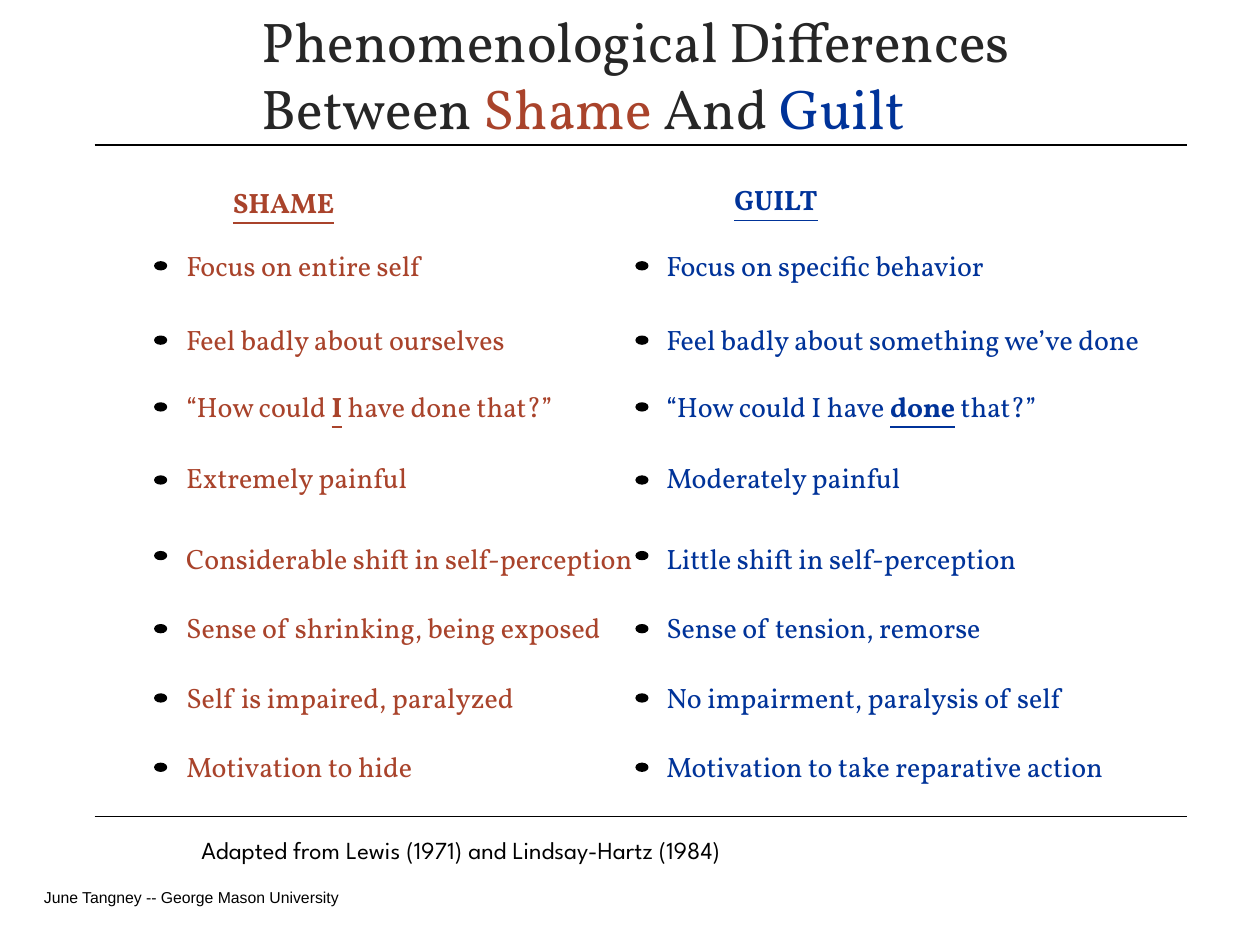
import pptx
import pptx.dml.color
import pptx.enum.shapes
import pptx.enum.text
import pptx.oxml
import pptx.util
from pptx.util import Inches

THEME = {
    "ink": "262626", "shame": "A9432B", "guilt": "003399", "black": "000000",
    "serif": "Vollkorn", "sans": "League Spartan", "plain": "Arial",
    "title_size": 32, "body_size": 16, "source_size": 14, "footer_size": 9,
}

# Content: a title line is a list of (text, colour) runs
TITLE = [
    [("Phenomenological Differences", "ink")],
    [("Between ", "ink"), ("Shame ", "shame"), ("And ", "ink"), ("Guilt", "guilt")],
]
SOURCE = "Adapted from Lewis (1971) and Lindsay-Hartz (1984)"
FOOTER = "June Tangney -- George Mason University"

# Each item is (text, box width); *stars* mark the stressed word
COLUMNS = [
    {
        "color": "shame", "bullet_left": 1.23, "text_left": 1.38,
        "heading": ("*SHAME*", 1.75, 1.42, 1.06),
        "items": [
            ("Focus on entire self", 2.11),
            ("Feel badly about ourselves", 2.84),
            ("“How could *I* have done that?”", 3.31),
            ("Extremely painful", 2.04),
            ("Considerable shift in self-perception", 3.8),
            ("Sense of shrinking, being exposed", 3.56),
            ("Self is impaired, paralyzed", 2.85),
            ("Motivation to hide", 2.05),
        ],
    },
    {
        "color": "guilt", "bullet_left": 5.05, "text_left": 5.19,
        "heading": ("*GUILT*", 5.73, 1.4, 0.94),
        "items": [
            ("Focus on specific behavior", 2.82),
            ("Feel badly about something we’ve done", 4.22),
            ("“How could I have *done* that?”", 3.31),
            ("Moderately painful", 2.12),
            ("Little shift in self-perception", 3.01),
            ("Sense of tension, remorse", 2.71),
            ("No impairment, paralysis of self", 3.37),
            ("Motivation to take reparative action", 3.76),
        ],
    },
]

# Row positions: (text top, bullet top)
ROWS = [(1.92, 2.08), (2.51, 2.67), (3.04, 3.2), (3.61, 3.78),
        (4.25, 4.38), (4.8, 4.96), (5.35, 5.51), (5.9, 6.06)]
ROW_HEIGHT = 0.37
RULE_TOPS = (1.15, 6.48)
RULE_LEFT, RULE_RIGHT = 0.75, 9.42


def color_of(name):
    return pptx.dml.color.RGBColor.from_string(THEME[name])


def add_text(page, area, lines, font, size, wrap=False):
    """Lines hold runs of (text, colour) or (text, colour, stressed)."""
    box = page.shapes.add_textbox(*map(Inches, area))
    frame = box.text_frame
    frame.word_wrap = wrap
    frame.auto_size = pptx.enum.text.MSO_AUTO_SIZE.SHAPE_TO_FIT_TEXT
    for index, runs in enumerate(lines):
        para = frame.add_paragraph() if index else frame.paragraphs[0]
        for text, color, *stressed in runs:
            span = para.add_run()
            span.text = text
            span.font.name = THEME[font]
            span.font.size = pptx.util.Pt(THEME[size])
            span.font.color.rgb = color_of(color)
            if any(stressed):
                span.font.bold = span.font.underline = True


def add_marked(page, area, text, color):
    """Every second part between stars is bold and underlined."""
    runs = [(part, color, index % 2 == 1)
            for index, part in enumerate(text.split("*")) if part]
    add_text(page, area, [runs], "serif", "body_size")


def add_bullet(page, left, top):
    dot = page.shapes.add_shape(pptx.enum.shapes.MSO_SHAPE.OVAL,
                                *map(Inches, (left, top, 0.09, 0.06)))
    dot.shadow.inherit = False
    dot.fill.solid()
    dot.fill.fore_color.rgb = color_of("black")
    dot.line.color.rgb = color_of("black")
    dot.line.width = pptx.util.Pt(1)


def add_rule(page, top):
    rule = page.shapes.add_connector(
        pptx.enum.shapes.MSO_CONNECTOR.STRAIGHT,
        *map(Inches, (RULE_LEFT, top, RULE_RIGHT, top)))
    rule.line.color.rgb = color_of("black")
    rule.line.width = pptx.util.Pt(1)
    properties = rule._element.spPr
    properties.append(pptx.oxml.parse_xml(
        '<a:effectLst xmlns:a="http://schemas.openxmlformats.org/drawingml/2006/main"/>'))


def main():
    deck = pptx.Presentation()
    deck.slide_width, deck.slide_height = Inches(10), Inches(7.5)
    page = deck.slides.add_slide(deck.slide_layouts[6])

    # Title and rules
    add_text(page, (1.98, 0, 6.25, 1.18), TITLE, "serif", "title_size")
    for top in RULE_TOPS:
        add_rule(page, top)

    # Two columns of paired statements
    for column in COLUMNS:
        color = column["color"]
        heading, left, top, width = column["heading"]
        add_marked(page, (left, top, width, ROW_HEIGHT), heading, color)
        for (text, width), (top, bullet_top) in zip(column["items"], ROWS):
            add_bullet(page, column["bullet_left"], bullet_top)
            add_marked(page, (column["text_left"], top, width, ROW_HEIGHT), text, color)

    # Source and footer
    add_text(page, (1.5, 6.58, 4.88, 0.33), [[(SOURCE, "black")]], "sans", "source_size")
    add_text(page, (0.25, 7, 3.08, 0.26), [[(FOOTER, "black")]],
             "plain", "footer_size", wrap=True)

    deck.save("out.pptx")


if __name__ == "__main__":
    main()
